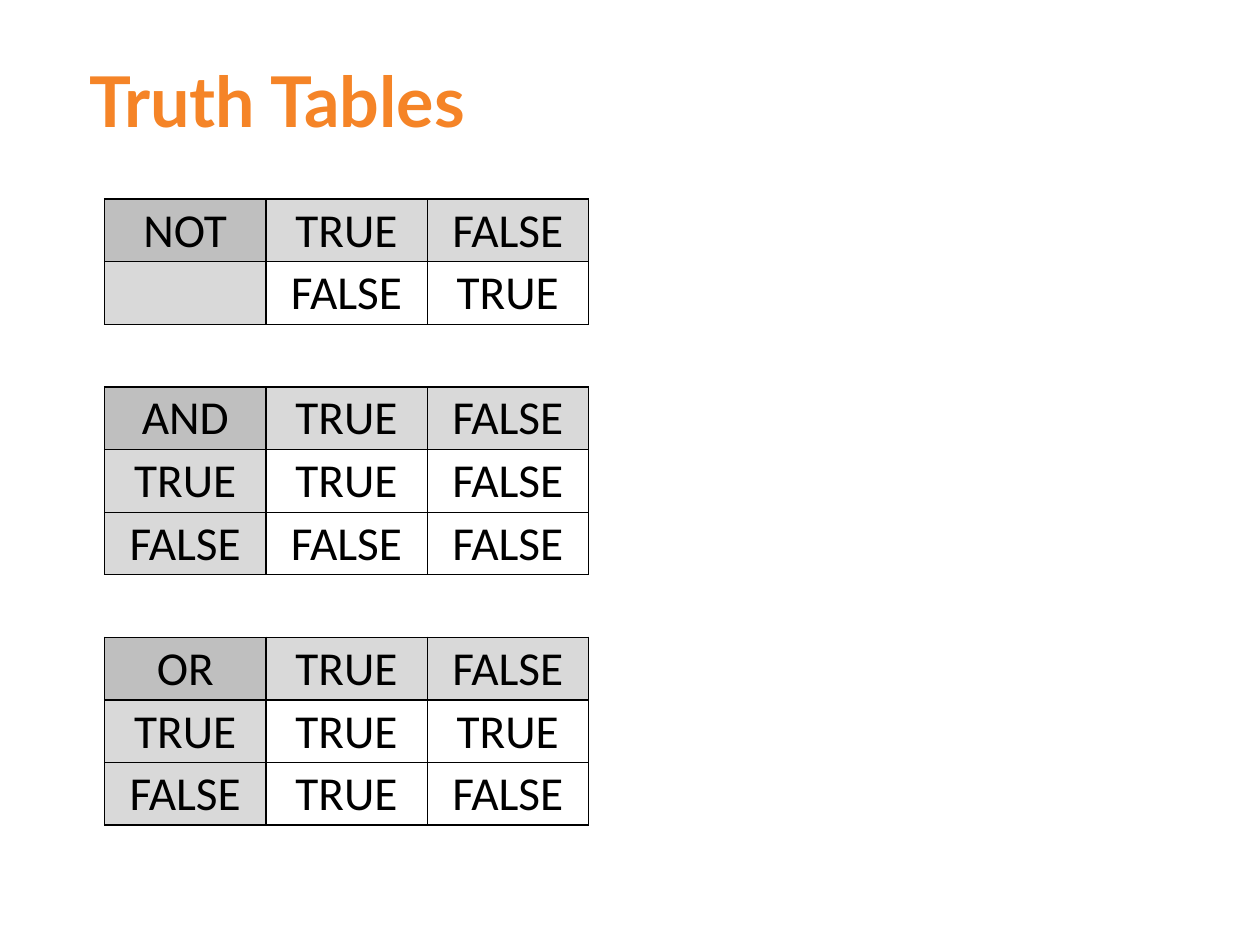
from dataclasses import dataclass
from lxml.etree import SubElement
from pptx import Presentation
from pptx.dml.color import RGBColor
from pptx.enum.text import MSO_ANCHOR, PP_ALIGN
from pptx.oxml.ns import qn
from pptx.util import Inches, Pt


@dataclass(frozen=True)
class Theme:
    """Colours, fonts and type sizes of the slide."""
    accent: str = "F58427"
    ink: str = "000000"
    corner: str = "BFBFBF"
    head: str = "D9D9D9"
    title_font: str = "Lato"
    cell_font: str = "Calibri"
    title_size: int = 40
    cell_size: int = 27
    thick: float = 1
    thin: float = 0.5


THEME = Theme()
GAP = ["", "", ""]
HEADS = ["TRUE", "FALSE"]
TRUTHS = [
    ["NOT", *HEADS],
    ["", "FALSE", "TRUE"],
    GAP,
    ["AND", *HEADS],
    ["TRUE", "TRUE", "FALSE"],
    ["FALSE", "FALSE", "FALSE"],
    GAP,
    ["OR", *HEADS],
    ["TRUE", "TRUE", "TRUE"],
    ["FALSE", "TRUE", "FALSE"],
]
COLUMN_LINES = [THEME.thick, THEME.thick, THEME.thin, THEME.thick]


def style(font, name, size, color, bold=False):
    """Set the look of a font."""
    font.name, font.size, font.bold = name, Pt(size), bold
    font.color.rgb = RGBColor.from_string(color)


def add_title(slide, text):
    """Place and format the title."""
    title = slide.shapes.title
    title.left, title.top = Inches(0.51), Inches(0.42)
    title.width, title.height = Inches(5.07), Inches(0.74)
    frame = title.text_frame
    frame.text = text
    frame.margin_left = frame.margin_right = 0
    frame.vertical_anchor = MSO_ANCHOR.MIDDLE
    line = frame.paragraphs[0]
    line.alignment = PP_ALIGN.LEFT
    line._p.get_or_add_pPr().set("marL", str(Inches(0.2)))
    style(line.runs[0].font, THEME.title_font, THEME.title_size, THEME.accent, True)


def add_border(cell, side, width):
    """Draw one side of a cell, or clear it when the width is zero."""
    line = SubElement(cell._tc.get_or_add_tcPr(), qn(f"a:ln{side}"), w=str(Pt(width)))
    if not width:
        SubElement(line, qn("a:noFill"))
        return
    fill = SubElement(line, qn("a:solidFill"))
    SubElement(fill, qn("a:srgbClr"), val=THEME.ink)


def is_head(row):
    """Tell whether a row opens a truth table."""
    return row == 0 or row > 0 and TRUTHS[row - 1] is GAP


def row_line(row):
    """Give the width of the line below a row."""
    return THEME.thin if row > 0 and is_head(row - 1) else THEME.thick


def fill_cell(cell, row, col):
    """Write, border and shade one cell."""
    gap = TRUTHS[row] is GAP
    sides = {
        "L": 0 if gap else COLUMN_LINES[col],
        "R": 0 if gap else COLUMN_LINES[col + 1],
        "T": row_line(row - 1),
        "B": row_line(row),
    }
    for side, width in sides.items():
        add_border(cell, side, width)
    if gap or (col and not is_head(row)):
        cell.fill.background()
    else:
        shade = THEME.head if col or not is_head(row) else THEME.corner
        cell.fill.solid()
        cell.fill.fore_color.rgb = RGBColor.from_string(shade)
    cell.vertical_anchor = MSO_ANCHOR.MIDDLE
    cell.margin_left = cell.margin_right = cell.margin_top = Inches(0.01)
    cell.margin_bottom = 0
    if TRUTHS[row][col]:
        cell.text_frame.text = TRUTHS[row][col]
        line = cell.text_frame.paragraphs[0]
        line.alignment = PP_ALIGN.CENTER
        style(line.runs[0].font, THEME.cell_font, THEME.cell_size, THEME.ink)


def add_truths(slide):
    """Add the grid that holds the three truth tables."""
    table = slide.shapes.add_table(
        len(TRUTHS), len(GAP),
        Inches(0.83), Inches(1.58), Inches(3.84), Inches(4.97),
    ).table
    table.first_row = table.horz_banding = False
    for row in range(len(TRUTHS)):
        for col in range(len(GAP)):
            fill_cell(table.cell(row, col), row, col)


def main():
    """Build the slide and save it."""
    deck = Presentation()
    deck.slide_width, deck.slide_height = Inches(10), Inches(7.5)
    slide = deck.slides.add_slide(deck.slide_layouts[5])
    add_title(slide, "Truth Tables")
    add_truths(slide)
    deck.save("out.pptx")


if __name__ == "__main__":
    main()
